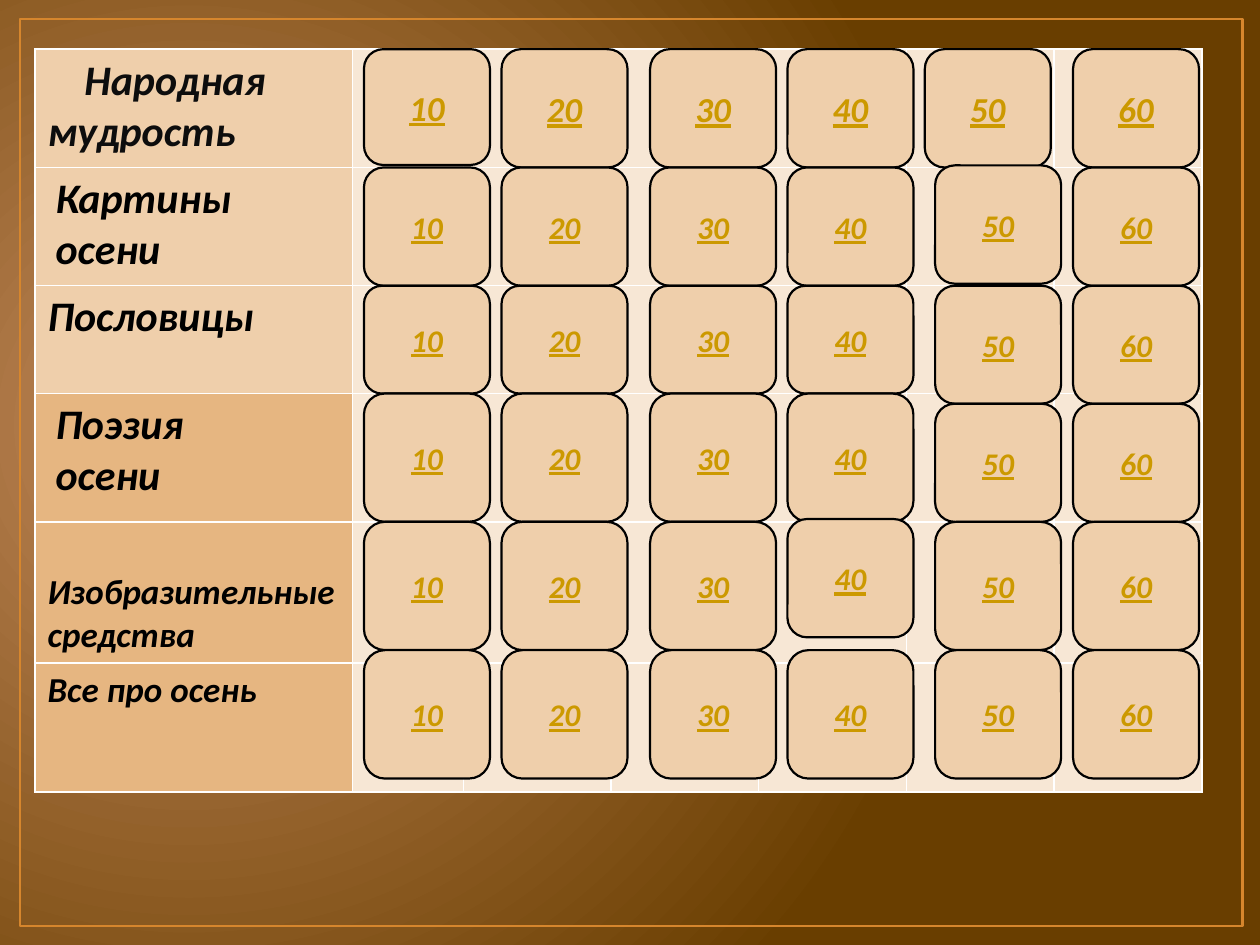
"""Build the autumn quiz board: a table of categories under a grid of score buttons."""
import pptx
import pptx.dml.color
import pptx.enum.shapes
import pptx.enum.text
import pptx.oxml
import pptx.oxml.ns
import pptx.util

Pt = pptx.util.Pt
NAMESPACE = pptx.oxml.ns.nsdecls("a")


def colour(value):
    return pptx.dml.color.RGBColor.from_string(value)


class Board:
    font_name = "Calibri"
    button_fill = "EFCFAB"
    button_width = 72
    score_fill = "F7E7D5"

    def __init__(self, slide):
        self.slide = slide

    def background(self, inner, outer, focus):
        fill = self.slide.background.fill
        fill.gradient()
        for stop, value, position in zip(fill.gradient_stops, (inner, outer), (0, 1)):
            stop.color.rgb = colour(value)
            stop.position = position
        gradient = self.slide.element.find(".//" + pptx.oxml.ns.qn("a:gradFill"))
        gradient.remove(gradient.find(pptx.oxml.ns.qn("a:lin")))
        sides = " ".join(f'{side}="{share * 1000}"' for side, share in zip("ltrb", focus))
        gradient.append(pptx.oxml.parse_xml(
            f'<a:path {NAMESPACE} path="circle"><a:fillToRect {sides}/></a:path>'))

    def shape(self, kind, left, top, width, height, line, weight):
        shape = self.slide.shapes.add_shape(kind, Pt(left), Pt(top), Pt(width), Pt(height))
        shape.shadow.inherit = False
        shape.line.color.rgb = colour(line)
        shape.line.width = Pt(weight)
        return shape

    def frame(self, left, top, width, height):
        kind = pptx.enum.shapes.MSO_SHAPE.RECTANGLE
        self.shape(kind, left, top, width, height, "D6862D", 1.5).fill.background()

    def style(self, paragraph, size, value):
        font = paragraph.font
        font.name, font.size, font.bold, font.italic = self.font_name, Pt(size), True, True
        font.color.rgb = colour(value)

    def button(self, left, top, height, score, size):
        kind = pptx.enum.shapes.MSO_SHAPE.ROUNDED_RECTANGLE
        shape = self.shape(kind, left, top, self.button_width, height, "000000", 1.25)
        shape.fill.solid()
        shape.fill.fore_color.rgb = colour(self.button_fill)
        shape.text_frame.text = str(score)
        shape.text_frame.vertical_anchor = pptx.enum.text.MSO_ANCHOR.MIDDLE
        paragraph = shape.text_frame.paragraphs[0]
        paragraph.alignment = pptx.enum.text.PP_ALIGN.CENTER
        self.style(paragraph, size, "CC9900")
        paragraph.font.underline = True

    def cell(self, cell, fill):
        cell.fill.solid()
        cell.fill.fore_color.rgb = colour(fill)
        properties = cell._tc.get_or_add_tcPr()
        for index, side in enumerate("LRTB"):
            properties.insert(index, pptx.oxml.parse_xml(
                f'<a:ln{side} {NAMESPACE} w="12700"><a:solidFill>'
                f'<a:srgbClr val="FFFFFF"/></a:solidFill></a:ln{side}>'))

    def table(self, left, top, widths, heights, categories):
        table = self.slide.shapes.add_table(
            len(heights), len(widths), Pt(left), Pt(top),
            Pt(sum(widths)), Pt(sum(heights))).table
        table.first_row = table.horz_banding = False
        for column, width in zip(table.columns, widths):
            column.width = Pt(width)
        for row, height, category in zip(table.rows, heights, categories):
            text, size, value, fill, margin, indent, anchor = category
            row.height = Pt(height)
            for index, cell in enumerate(row.cells):
                self.cell(cell, self.score_fill if index else fill)
            heading = row.cells[0]
            heading.text = text
            heading.vertical_anchor = anchor
            for paragraph in heading.text_frame.paragraphs:
                self.style(paragraph, size, value)
                properties = paragraph._p.get_or_add_pPr()
                properties.set("marL", str(Pt(margin)))
                properties.set("indent", str(Pt(indent)))


def main():
    presentation = pptx.Presentation()
    presentation.slide_width, presentation.slide_height = Pt(720), Pt(540)
    board = Board(presentation.slides.add_slide(presentation.slide_layouts[6]))
    board.background("C08759", "693E00", (15, 50, 85, 60))
    board.frame(11.5, 10.8, 698.4, 518.4)

    top_anchor = pptx.enum.text.MSO_ANCHOR.TOP
    bottom_anchor = pptx.enum.text.MSO_ANCHOR.BOTTOM
    light, dark = "EFCFAB", "E6B681"
    categories = [
        ("Народная мудрость", 24, "0D0D0D", light, 0, 21, top_anchor),
        ("Картины\nосени", 24, "000000", light, 4.5, 0, top_anchor),
        ("Пословицы", 24, "000000", light, 0, 0, top_anchor),
        ("Поэзия\nосени", 24, "000000", dark, 4.5, 0, top_anchor),
        ("Изобразительные средства", 20, "000000", dark, 0, 0, bottom_anchor),
        ("Все про осень", 20, "000000", dark, 0, 0, top_anchor),
    ]
    board.table(20, 28.1, [181.4, 63.4] + [84.4] * 5,
                [67.6, 67.6, 61.6, 73.4, 80.6, 73.8], categories)

    lefts = [208, 286.6, 371.5, 450, 534.4, 613.2]
    edges = [28.1, 95.7, 163.3, 224.9, 298.2, 371.5, 444.9]
    right_edges = edges[:3] + [230.7] + edges[4:]
    moved = {
        (0, 0): (208, 28.1, 66.2),
        (0, 4): (528.5, 28.1, 67.6),
        (1, 4): (534.4, 94.5, 67.6),
        (4, 3): (450, 296.6, 67.6),
    }
    for row in range(len(categories)):
        for column, left in enumerate(lefts):
            tops = right_edges if column > 3 else edges
            place = (left, tops[row], tops[row + 1] - tops[row])
            board.button(*moved.get((row, column), place),
                         score=10 * (column + 1), size=18 if row else 20)
    presentation.save("out.pptx")


if __name__ == "__main__":
    main()
